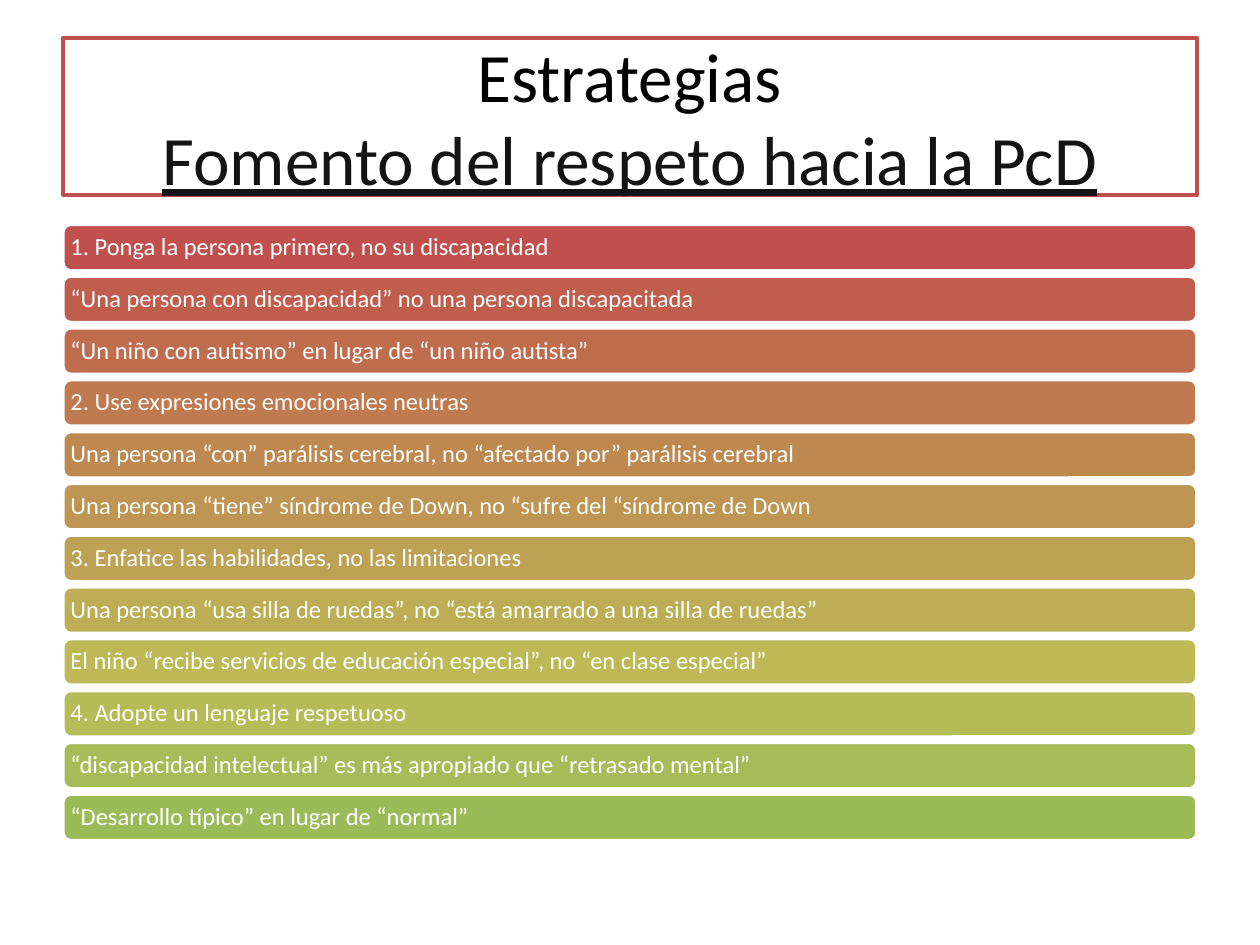
from dataclasses import dataclass

from pptx import Presentation
from pptx.dml.color import RGBColor
from pptx.enum.shapes import MSO_SHAPE
from pptx.enum.text import MSO_ANCHOR, PP_ALIGN
from pptx.shapes.autoshape import Shape
from pptx.slide import Slide
from pptx.text.text import _Paragraph
from pptx.util import Pt

RECT = MSO_SHAPE.RECTANGLE
ROUND = MSO_SHAPE.ROUNDED_RECTANGLE
MIDDLE = MSO_ANCHOR.MIDDLE
LEFT = PP_ALIGN.LEFT
CENTER = PP_ALIGN.CENTER

FONT = "Calibri"
COLORS = {
    "white": "FFFFFF",
    "black": "000000",
    "ink": "141414",
    "red": "C0504D",
    "brick": "C05E4E",
    "clay": "BF6D4F",
    "copper": "BF7A50",
    "ochre": "BE8851",
    "sand": "BE9553",
    "gold": "BDA154",
    "straw": "BDAE55",
    "olive": "BCB956",
    "lime": "B3BC57",
    "leaf": "A7BB58",
    "green": "9BBB59",
}

EDGE = 36
WIDTH = 648
TOP = 128.2
STEP = 29.6
HEIGHT = 26.6


@dataclass
class Bar:
    text: str
    fill: str


@dataclass
class Line:
    text: str
    color: str
    under: bool


TITLE = [
    Line("Estrategias", "black", False),
    Line("Fomento del respeto hacia la PcD", "ink", True),
]

BARS = [
    Bar("1. Ponga la persona primero, no su discapacidad", "red"),
    Bar("“Una persona con discapacidad” no una persona discapacitada", "brick"),
    Bar("“Un niño con autismo” en lugar de “un niño autista”", "clay"),
    Bar("2. Use expresiones emocionales neutras", "copper"),
    Bar("Una persona “con” parálisis cerebral, no “afectado por” parálisis cerebral", "ochre"),
    Bar("Una persona “tiene” síndrome de Down, no “sufre del “síndrome de Down", "sand"),
    Bar("3. Enfatice las habilidades, no las limitaciones", "gold"),
    Bar("Una persona “usa silla de ruedas”, no “está amarrado a una silla de ruedas”", "straw"),
    Bar("El niño “recibe servicios de educación especial”, no “en clase especial”", "olive"),
    Bar("4. Adopte un lenguaje respetuoso", "lime"),
    Bar("“discapacidad intelectual” es más apropiado que “retrasado mental”", "leaf"),
    Bar("“Desarrollo típico” en lugar de “normal”", "green"),
]


def color(name: str) -> RGBColor:
    return RGBColor.from_string(COLORS[name])


def add_box(slide: Slide, kind: MSO_SHAPE, top: float, height: float,
            fill: str, line: str, inset: float) -> Shape:
    box = slide.shapes.add_shape(kind, Pt(EDGE), Pt(top), Pt(WIDTH), Pt(height))
    box.shadow.inherit = False
    box.fill.solid()
    box.fill.fore_color.rgb = color(fill)
    box.line.color.rgb = color(line)
    box.line.width = Pt(2)
    frame = box.text_frame
    frame.word_wrap = True
    frame.vertical_anchor = MIDDLE
    frame.margin_left = frame.margin_right = Pt(inset)
    frame.margin_top = frame.margin_bottom = Pt(inset)
    return box


def style(para: _Paragraph, size: float, tint: str, align: PP_ALIGN,
          under: bool = False) -> None:
    para.alignment = align
    for run in para.runs:
        run.font.name = FONT
        run.font.size = Pt(size)
        run.font.color.rgb = color(tint)
        run.font.underline = under


def add_title(slide: Slide, lines: list[Line]) -> None:
    box = add_box(slide, RECT, 21.6, 90, "white", "red", 3.6)
    frame = box.text_frame
    frame.text = "\n".join(line.text for line in lines)
    for para, line in zip(frame.paragraphs, lines):
        style(para, 39.6, line.color, CENTER, line.under)


def add_bar(slide: Slide, bar: Bar, row: int) -> None:
    box = add_box(slide, ROUND, TOP + row * STEP, HEIGHT, bar.fill, "white", 3)
    box.text_frame.text = bar.text
    para = box.text_frame.paragraphs[0]
    para.line_spacing = 0.9
    style(para, 14, "white", LEFT)


def main() -> None:
    deck = Presentation()
    deck.slide_width = Pt(720)
    deck.slide_height = Pt(540)
    slide = deck.slides.add_slide(deck.slide_layouts[6])
    add_title(slide, TITLE)
    for row, bar in enumerate(BARS):
        add_bar(slide, bar, row)
    deck.save("out.pptx")


if __name__ == "__main__":
    main()
